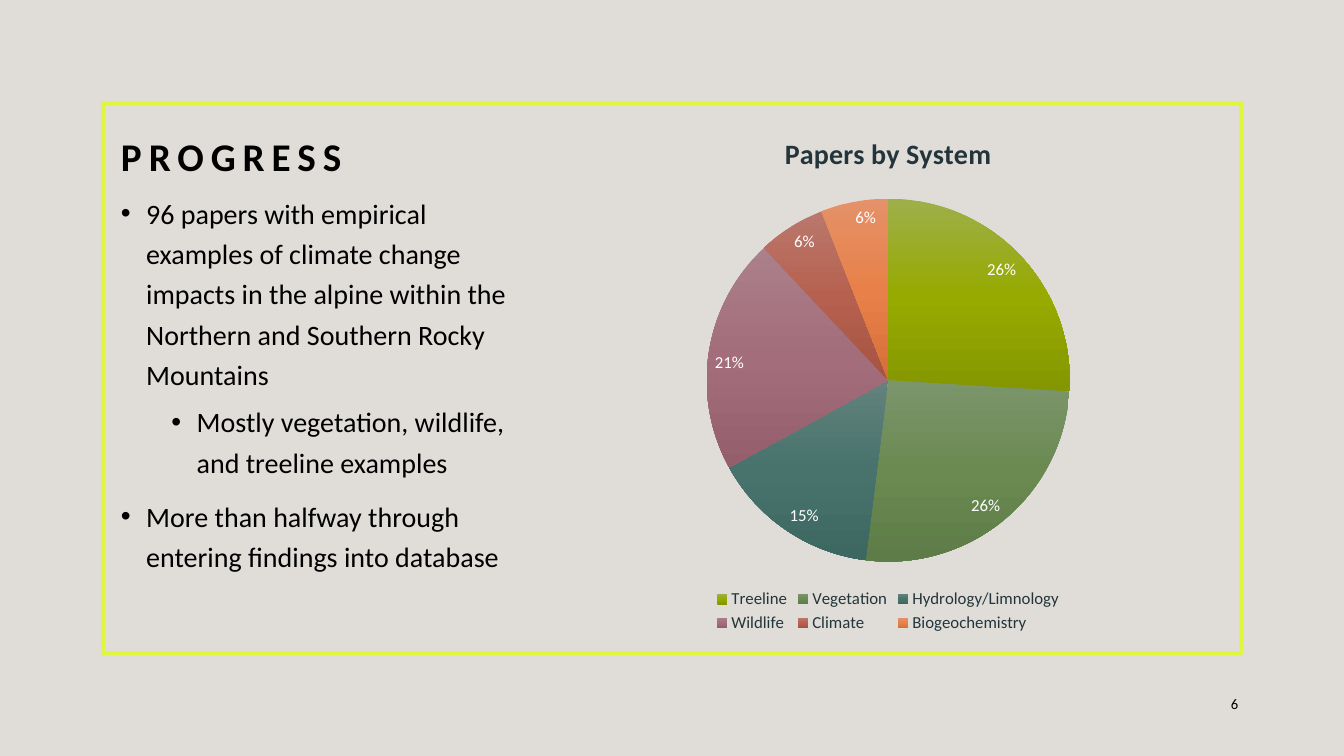
from lxml import etree
from pptx import Presentation
from pptx.chart.data import CategoryChartData
from pptx.dml.color import RGBColor
from pptx.enum.chart import XL_CHART_TYPE, XL_LABEL_POSITION, XL_LEGEND_POSITION
from pptx.enum.shapes import MSO_SHAPE
from pptx.enum.text import MSO_ANCHOR, MSO_AUTO_SIZE, PP_ALIGN
from pptx.oxml import parse_xml
from pptx.oxml.ns import nsdecls, qn
from pptx.util import Inches, Pt

PIE = XL_CHART_TYPE.PIE
INSIDE_END = XL_LABEL_POSITION.INSIDE_END
LEGEND_BOTTOM = XL_LEGEND_POSITION.BOTTOM
RECTANGLE = MSO_SHAPE.RECTANGLE
TOP, MIDDLE, BOTTOM = MSO_ANCHOR.TOP, MSO_ANCHOR.MIDDLE, MSO_ANCHOR.BOTTOM
LEFT, RIGHT = PP_ALIGN.LEFT, PP_ALIGN.RIGHT
NO_AUTOFIT = MSO_AUTO_SIZE.NONE

FONT = "Calibri"
BACKGROUND = RGBColor(0xE0, 0xDD, 0xD8)
LIME = RGBColor(0xE0, 0xF5, 0x3D)
BLACK = RGBColor(0, 0, 0)
WHITE = RGBColor(0xFF, 0xFF, 0xFF)
SLATE = RGBColor(0x23, 0x35, 0x3B)

# Text, level
BULLETS = [
    ("96 papers with empirical examples of climate change impacts in the alpine "
     "within the Northern and Southern Rocky Mountains", 0),
    ("Mostly vegetation, wildlife, and treeline examples", 1),
    ("More than halfway through entering findings into database", 0),
]

# System, share of papers, gradient from top to bottom
SYSTEMS = [
    ("Treeline", 26, ("9EAF4B", "96AA00", "859700")),
    ("Vegetation", 26, ("7C956B", "6A8A52", "5D7C47")),
    ("Hydrology/Limnology", 15, ("63827D", "47736C", "3D6862")),
    ("Wildlife", 21, ("AB808B", "A36D7B", "945E6C")),
    ("Climate", 6, ("BA786C", "B66150", "A65342")),
    ("Biogeochemistry", 6, ("E59169", "E78149", "D67038")),
]


def set_font(font, size, color, bold=False):
    font.name = FONT
    font.size = Pt(size)
    font.bold = bold
    font.color.rgb = color


def place(shape, left, top, width, height):
    shape.left, shape.top = Inches(left), Inches(top)
    shape.width, shape.height = Inches(width), Inches(height)


def prepare_frame(text_frame, anchor):
    text_frame.word_wrap = True
    text_frame.auto_size = NO_AUTOFIT
    text_frame.vertical_anchor = anchor


def add_border(slide):
    border = slide.shapes.add_shape(
        RECTANGLE, Inches(1.02), Inches(1.02), Inches(11.29), Inches(5.46))
    border.shadow.inherit = False
    border.fill.background()
    border.line.color.rgb = LIME
    border.line.width = Pt(3)


def fill_title(title):
    place(title, 1.1, 1.11, 9.82, 0.72)
    prepare_frame(title.text_frame, BOTTOM)
    title.text_frame.text = "PROGRESS"
    paragraph = title.text_frame.paragraphs[0]
    paragraph.alignment = LEFT
    paragraph.line_spacing = 1.2
    set_font(paragraph.font, 28, BLACK, bold=True)
    paragraph.runs[0]._r.get_or_add_rPr().set("spc", "500")


def fill_bullets(body):
    place(body, 1.1, 1.83, 4.27, 4.37)
    text_frame = body.text_frame
    prepare_frame(text_frame, TOP)
    for index, (text, level) in enumerate(BULLETS):
        paragraph = text_frame.add_paragraph() if index else text_frame.paragraphs[0]
        paragraph.text = text
        paragraph.level = level
        paragraph.line_spacing = 1.2
        paragraph.space_before = Pt((5 if level else 10) if index else 0)
        properties = paragraph._p.get_or_add_pPr()
        properties.set("marL", str(Inches(0.25 + 0.5 * level)))
        properties.set("indent", str(Inches(-0.25)))
        etree.SubElement(properties, qn("a:buFont"), typeface="Arial")
        etree.SubElement(properties, qn("a:buChar"), char="•")
        set_font(paragraph.font, 20, BLACK)


def add_page_number(slide):
    box = slide.shapes.add_textbox(
        Inches(11.7), Inches(6.78), Inches(0.68), Inches(0.4))
    prepare_frame(box.text_frame, MIDDLE)
    box.text_frame.text = "6"
    paragraph = box.text_frame.paragraphs[0]
    paragraph.alignment = RIGHT
    set_font(paragraph.font, 10.5, BLACK)


def fill_gradient(point, colors):
    stops = "".join(
        f'<a:gs pos="{index * 50000}"><a:srgbClr val="{color}"/></a:gs>'
        for index, color in enumerate(colors))
    gradient = parse_xml(
        f'<a:gradFill {nsdecls("a")} rotWithShape="1"><a:gsLst>{stops}</a:gsLst>'
        '<a:lin ang="5400000" scaled="0"/></a:gradFill>')
    point.format.line.fill.background()
    point._element.xpath(f"c:dPt[c:idx/@val='{point._idx}']/c:spPr")[0].insert(0, gradient)


def set_plot_area(chart, **fractions):
    """Fix the inner plot area as fractions of the chart."""
    values = "".join(
        f'<c:{name} val="{value}"/>' for name, value in fractions.items())
    layout = parse_xml(
        f'<c:layout {nsdecls("c")}><c:manualLayout><c:layoutTarget val="inner"/>'
        f'<c:xMode val="edge"/><c:yMode val="edge"/>{values}'
        '</c:manualLayout></c:layout>')
    plot_area = chart._chartSpace.chart.plotArea
    for automatic in plot_area.findall(qn("c:layout")):
        plot_area.remove(automatic)
    plot_area.insert(0, layout)


def add_systems_chart(slide):
    data = CategoryChartData()
    data.categories = [name for name, _, _ in SYSTEMS]
    data.add_series("Series 1", [share for _, share, _ in SYSTEMS])
    chart = slide.shapes.add_chart(
        PIE, Inches(5.06), Inches(1.12), Inches(7.5), Inches(5.2), data).chart
    set_font(chart.font, 10, BLACK)
    set_plot_area(chart, x=0.26, y=0.16, w=0.48, h=0.7)

    # Title and legend
    chart.has_title = True
    title_frame = chart.chart_title.text_frame
    title_frame.text = "Papers by System"
    set_font(title_frame.paragraphs[0].font, 20, SLATE, bold=True)
    chart.chart_title.include_in_layout = False
    chart.has_legend = True
    chart.legend.position = LEGEND_BOTTOM
    chart.legend.include_in_layout = False
    set_font(chart.legend.font, 12, SLATE)

    # Slices and their labels
    plot = chart.plots[0]
    plot.vary_by_categories = True
    for index, (_, _, colors) in enumerate(SYSTEMS):
        fill_gradient(plot.series[0].points[index], colors)
    plot.has_data_labels = True
    labels = plot.data_labels
    labels.show_percentage = True
    labels.show_value = False
    labels.number_format = "0%"
    labels.number_format_is_linked = False
    labels.position = INSIDE_END
    set_font(labels.font, 12, WHITE)


def main():
    presentation = Presentation()
    presentation.slide_width = Inches(13.33)
    presentation.slide_height = Inches(7.5)
    slide = presentation.slides.add_slide(presentation.slide_layouts[1])
    slide.background.fill.solid()
    slide.background.fill.fore_color.rgb = BACKGROUND

    add_border(slide)
    fill_title(slide.shapes.title)
    fill_bullets(slide.placeholders[1])
    add_page_number(slide)
    add_systems_chart(slide)
    presentation.save("out.pptx")


if __name__ == "__main__":
    main()
